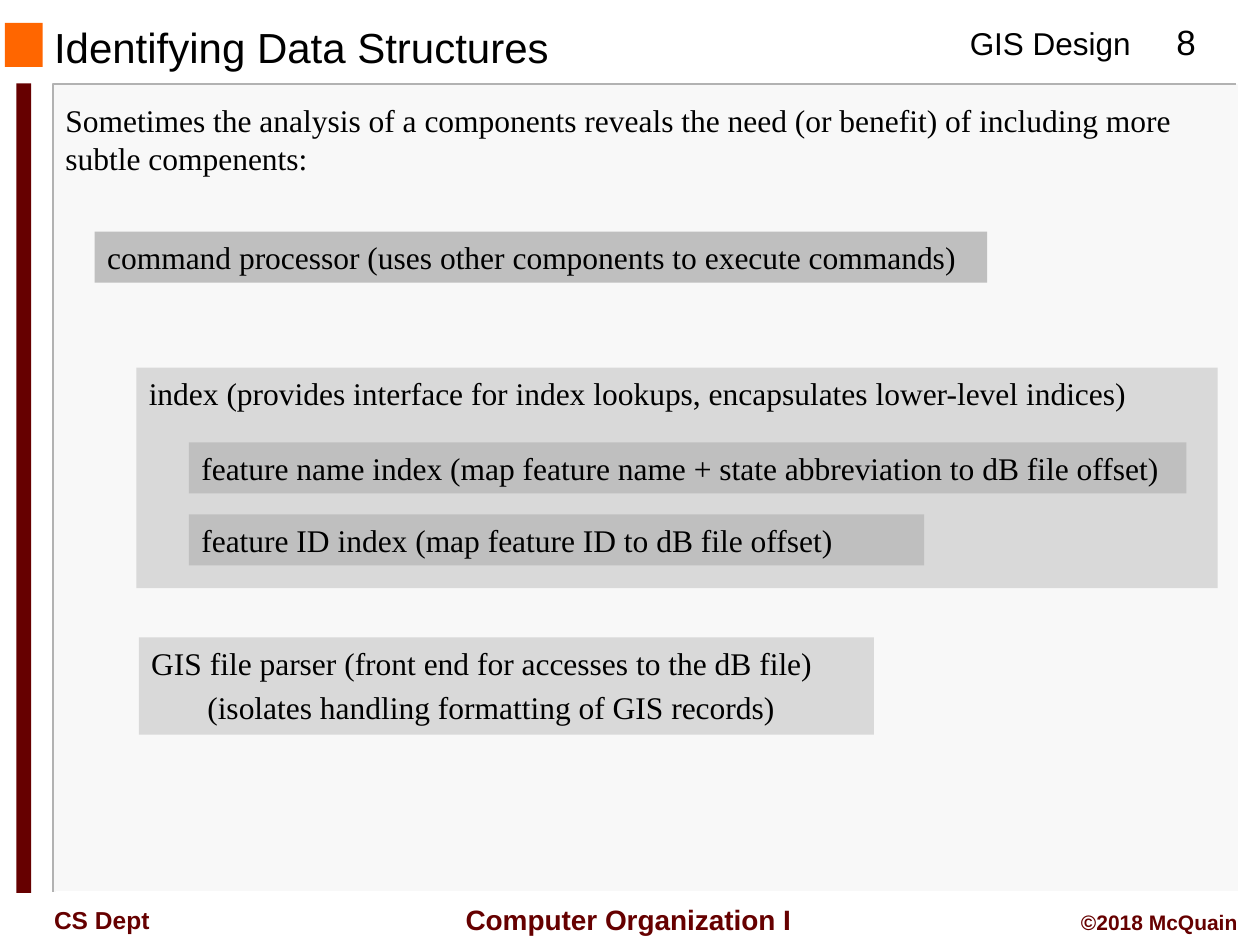
import pptx
import pptx.dml.color
import pptx.enum.shapes
import pptx.enum.text
import pptx.util

Cm = pptx.util.Cm
Pt = pptx.util.Pt
RGB = pptx.dml.color.RGBColor
ALIGN = pptx.enum.text.PP_ALIGN
ANCHOR = pptx.enum.text.MSO_ANCHOR

BLACK = RGB(0x00, 0x00, 0x00)
WHITE = RGB(0xFF, 0xFF, 0xFF)
MAROON = RGB(0x66, 0x00, 0x00)
ORANGE = RGB(0xFF, 0x66, 0x00)
PANEL = RGB(0xF8, 0xF8, 0xF8)
EDGE = RGB(0xB2, 0xB2, 0xB2)
LIGHT = RGB(0xD9, 0xD9, 0xD9)
DARK = RGB(0xBF, 0xBF, 0xBF)

deck = pptx.Presentation()
deck.slide_width = Cm(25.4)
deck.slide_height = Cm(19.05)
slide = deck.slides.add_slide(deck.slide_layouts[6])
shapes = slide.shapes


def add_block(left, top, width, height, fill):
    block = shapes.add_shape(pptx.enum.shapes.MSO_SHAPE.RECTANGLE,
                             Cm(left), Cm(top), Cm(width), Cm(height))
    block.shadow.inherit = False
    block.fill.solid()
    block.fill.fore_color.rgb = fill
    block.line.fill.background()
    return block


def write(shape, *lines, font="Times New Roman", size=18, color=BLACK,
          bold=False, align=ALIGN.LEFT, anchor=ANCHOR.TOP):
    """Fill a shape with one paragraph per line and return its text frame."""
    frame = shape.text_frame
    frame.word_wrap = True
    frame.vertical_anchor = anchor
    for i, line in enumerate(lines):
        para = frame.paragraphs[0] if i == 0 else frame.add_paragraph()
        para.alignment = align
        if i > 0:
            para.space_before = Pt(4)
        run = para.add_run()
        run.text = line
        run.font.name = font
        run.font.size = Pt(size)
        run.font.bold = bold
        run.font.color.rgb = color
    return frame


# Frame of the page
add_block(1.09, 1.7, 23.88, 16.28, PANEL)
edges = [
    (EDGE, [(24.92, 1.7), (1.07, 1.7), (1.07, 17.98)]),
    (WHITE, [(24.97, 1.7), (24.97, 17.98), (1.12, 17.98)]),
]
for color, points in edges:
    start, *rest = [(Cm(x), Cm(y)) for x, y in points]
    pen = shapes.build_freeform(*start)
    pen.add_line_segments(rest, close=False)
    edge = pen.convert_to_shape()
    edge.shadow.inherit = False
    edge.fill.background()
    edge.line.color.rgb = color
    edge.line.width = Pt(1)
add_block(0.1, 0.46, 0.76, 0.89, ORANGE)
add_block(0.33, 1.68, 0.3, 16.32, MAROON)

# Header, footer and intro
intro = ("Sometimes the analysis of a components reveals the need "
         "(or benefit) of including more subtle compenents:")
head = dict(font="Arial")
foot = dict(font="Arial", color=MAROON, bold=True)
labels = [
    (19.3, 0.36, 3.8, 1.02, "GIS Design", head),
    (23.06, 0.28, 1.7, 1.09, "8", dict(head, size=20, align=ALIGN.CENTER)),
    (0.84, 0.46, 16.08, 0.97, "Identifying Data Structures",
     dict(head, size=24, anchor=ANCHOR.MIDDLE)),
    (8.92, 18.06, 7.5, 0.94, "Computer Organization I",
     dict(foot, size=16, align=ALIGN.CENTER, anchor=ANCHOR.MIDDLE)),
    (0.84, 18.11, 3.81, 0.84, "CS Dept", dict(foot, size=14)),
    (17.58, 18.21, 7.62, 0.76, "©2018 McQuain",
     dict(foot, size=12, align=ALIGN.RIGHT)),
    (1.07, 1.92, 23.7, 1.8, intro, {}),
]
for *place, text, style in labels:
    box = shapes.add_textbox(*map(Cm, place))
    write(box, text, **style)

# Components
parts = [
    (1.91, 4.67, 17.99, 1.03, DARK,
     ["command processor (uses other components to execute commands)"]),
    (2.75, 7.41, 21.8, 4.45, LIGHT,
     ["index (provides interface for index lookups, "
      "encapsulates lower-level indices)"]),
    (3.81, 8.92, 20.11, 1.03, DARK,
     ["feature name index (map feature name + state abbreviation "
      "to dB file offset)"]),
    (3.81, 10.37, 14.82, 1.03, DARK,
     ["feature ID index (map feature ID to dB file offset)"]),
    (2.8, 12.85, 14.82, 1.96, LIGHT,
     ["GIS file parser (front end for accesses to the dB file)",
      "(isolates handling formatting of GIS records)"]),
]
for *place, fill, lines in parts:
    block = add_block(*place, fill)
    # Text starts at the top of every block; later lines are indented
    frame = write(block, *lines)
    for para in frame.paragraphs[1:]:
        para._p.get_or_add_pPr().set("marL", str(Cm(1.13)))

deck.save("out.pptx")
